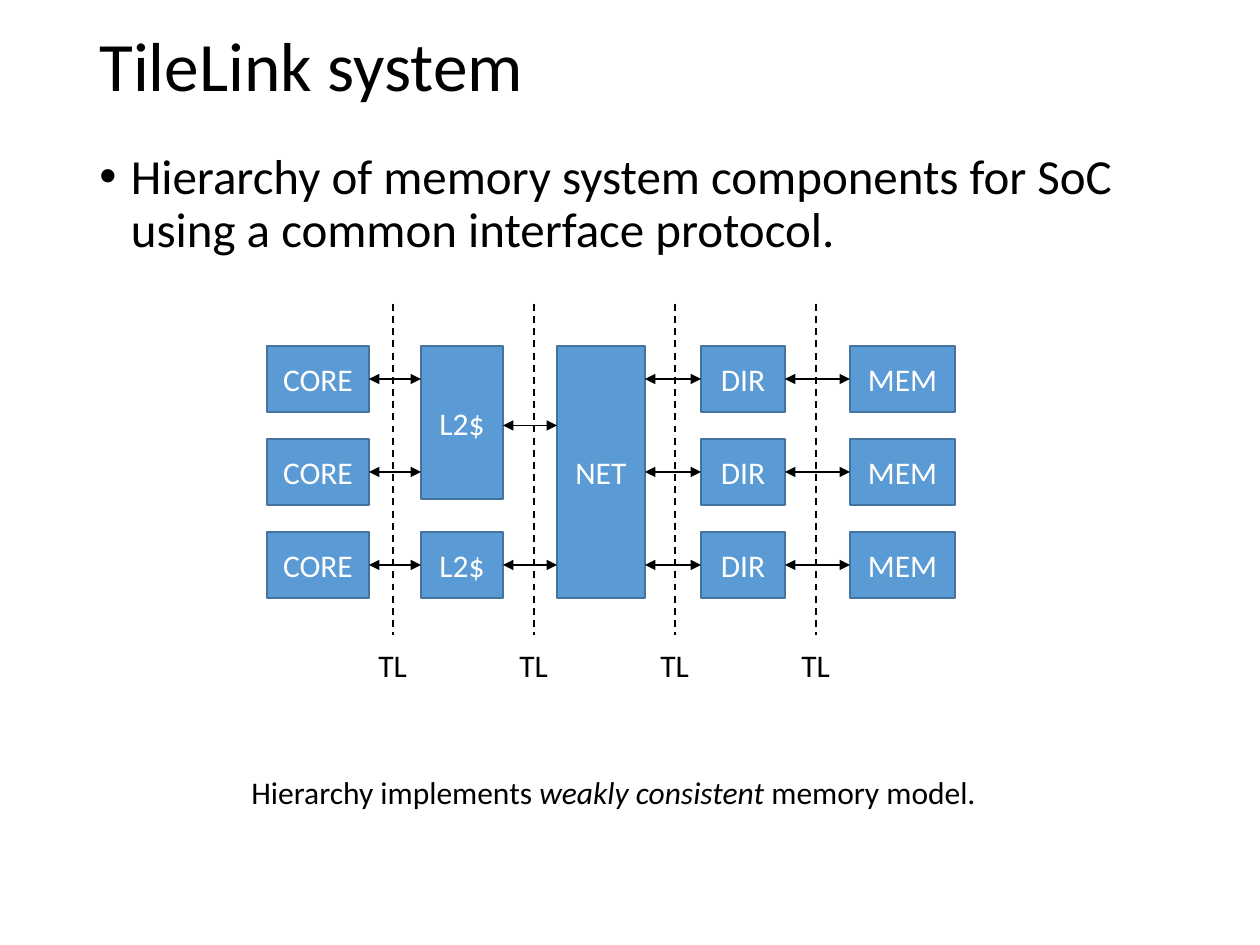
import pptx
import pptx.dml.color
import pptx.enum.dml
import pptx.enum.shapes
import pptx.enum.text
import pptx.oxml
import pptx.oxml.ns
import pptx.util

RGBColor = pptx.dml.color.RGBColor
BLACK = RGBColor(0, 0, 0)
WHITE = RGBColor(255, 255, 255)
BLUE = RGBColor(0x5B, 0x9B, 0xD5)
EDGE = RGBColor(0x43, 0x73, 0x9E)

# Content: each run is (words, italic)
TITLE = [("TileLink system", False)]
BODY = [("Hierarchy of memory system components for SoC "
         "using a common interface protocol.", False)]
NOTE = [("Hierarchy implements ", False), ("weakly consistent ", True),
        ("memory model.", False)]

# Diagram columns: label, left, width, [(top row, height)]
ROW_TOP, ROW_STEP, BOX_HEIGHT = 346, 93, 66
SINGLE_ROWS = [(row, BOX_HEIGHT) for row in range(3)]
COLUMNS = [
    ("CORE", 267, 102, SINGLE_ROWS),
    ("L2$", 421, 82, [(0, 153), (2, BOX_HEIGHT)]),
    ("NET", 557, 88, [(0, 2 * ROW_STEP + BOX_HEIGHT)]),
    ("DIR", 701, 84, SINGLE_ROWS),
    ("MEM", 850, 105, SINGLE_ROWS),
]
# Rows where each gap between neighbouring columns is crossed;
# 0.5 lies midway between the first two rows
CROSSINGS = [(0, 1, 2), (0.5, 2), (0, 1, 2), (0, 1, 2)]

# Interface lines
TL_LEFT, TL_STEP, TL_TOP, TL_BOTTOM = 393, 141, 304, 635


def px(length):
    return pptx.util.Emu(round(length * 914400 / 126))


def place(left, top, width, height):
    return [px(length) for length in (left, top, width, height)]


def write(shape, runs, size, color=BLACK, **paragraph_format):
    para = shape.text_frame.paragraphs[0]
    for name, value in paragraph_format.items():
        setattr(para, name, value)
    for words, italic in runs:
        span = para.add_run()
        span.text = words
        font = {"name": "Calibri", "size": pptx.util.Pt(size), "italic": italic}
        for name, value in font.items():
            setattr(span.font, name, value)
        span.font.color.rgb = color
    return para


def add_text(page, area, runs, size, wrap=False, **paragraph_format):
    box = page.shapes.add_textbox(*place(*area))
    box.text_frame.word_wrap = wrap
    if not wrap:
        box.text_frame.auto_size = pptx.enum.text.MSO_AUTO_SIZE.SHAPE_TO_FIT_TEXT
    return box, write(box, runs, size, **paragraph_format)


def add_block(page, label, area):
    block = page.shapes.add_shape(
        pptx.enum.shapes.MSO_SHAPE.RECTANGLE, *place(*area))
    block.shadow.inherit = False
    block.fill.solid()
    block.fill.fore_color.rgb = BLUE
    block.line.color.rgb = EDGE
    block.line.width = pptx.util.Pt(1)
    frame = {"word_wrap": False, "vertical_anchor": pptx.enum.text.MSO_ANCHOR.MIDDLE}
    for name, value in frame.items():
        setattr(block.text_frame, name, value)
    write(block, [(label, False)], 18, WHITE,
          alignment=pptx.enum.text.PP_ALIGN.CENTER)


def add_line(page, start, end, arrows=False):
    line = page.shapes.add_connector(
        pptx.enum.shapes.MSO_CONNECTOR.STRAIGHT, *place(*start, *end))
    line.line.color.rgb = BLACK
    line.line.width = pptx.util.Pt(1)
    properties = line._element.spPr
    if arrows:
        outline = line.line._get_or_add_ln()
        for tag in ("a:headEnd", "a:tailEnd"):
            pptx.oxml.ns  # namespace prefixes for the arrowheads
            head = pptx.oxml.parse_xml(
                f"<{tag} {pptx.oxml.ns.nsdecls('a')} type='triangle'/>")
            outline.append(head)
    else:
        line.line.dash_style = pptx.enum.dml.MSO_LINE.DASH
    properties.append(pptx.oxml.parse_xml(
        f"<a:effectLst {pptx.oxml.ns.nsdecls('a')}/>"))


def main():
    deck = pptx.Presentation()
    deck.slide_width, deck.slide_height = px(1260), px(945)
    page = deck.slides.add_slide(deck.slide_layouts[6])

    # Title and bullet
    title, _ = add_text(page, (87, 23, 1086, 92), TITLE, 39.6, True,
                        line_spacing=0.9)
    title.text_frame.vertical_anchor = pptx.enum.text.MSO_ANCHOR.MIDDLE
    _, para = add_text(page, (87, 146, 1086, 125), BODY, 28, True,
                       line_spacing=0.9, space_before=pptx.util.Pt(10))
    bullet = para._p.get_or_add_pPr()
    indent = pptx.util.Inches(0.25)
    bullet.set("marL", str(indent))
    bullet.set("indent", str(-indent))
    for xml in ("<a:buFont {} typeface='Arial'/>", "<a:buChar {} char='•'/>"):
        bullet.append(pptx.oxml.parse_xml(xml.format(pptx.oxml.ns.nsdecls("a"))))

    # Component blocks
    for label, left, width, blocks in COLUMNS:
        for row, height in blocks:
            add_block(page, label, (left, ROW_TOP + row * ROW_STEP, width, height))

    # Arrows between neighbouring columns
    for before, after, rows in zip(COLUMNS, COLUMNS[1:], CROSSINGS):
        for row in rows:
            y = ROW_TOP + BOX_HEIGHT / 2 + row * ROW_STEP
            add_line(page, (before[1] + before[2], y), (after[1], y), arrows=True)

    # Dashed interface lines and their labels
    for index in range(len(CROSSINGS)):
        x = TL_LEFT + index * TL_STEP
        add_line(page, (x, TL_TOP), (x, TL_BOTTOM))
        add_text(page, (x - 27, 640, 54, 50), [("TL", False)], 18)

    # Closing remark
    add_text(page, (239, 767, 752, 50), NOTE, 18)
    deck.save("out.pptx")


if __name__ == "__main__":
    main()
